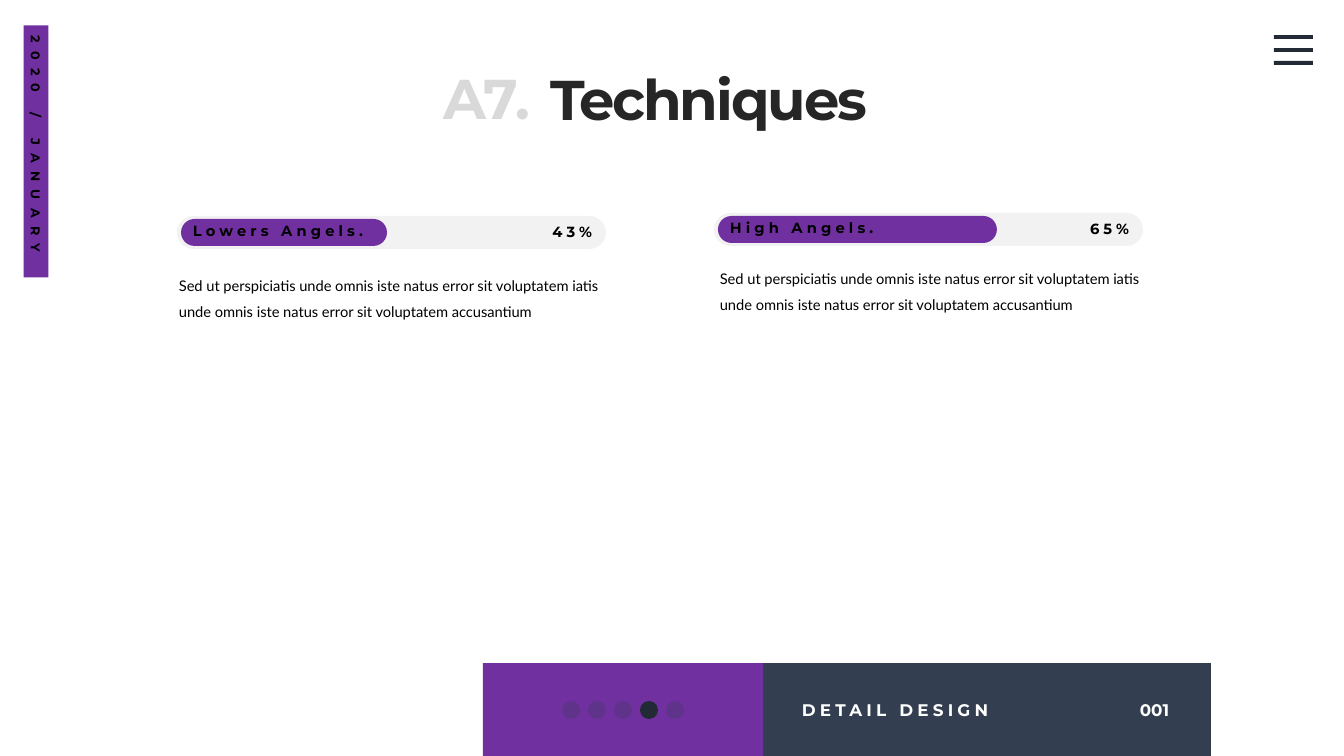
from lxml.etree import SubElement
from pptx import Presentation
from pptx.dml.color import RGBColor
from pptx.enum.shapes import MSO_SHAPE
from pptx.enum.text import MSO_ANCHOR, MSO_AUTO_SIZE, PP_ALIGN
from pptx.oxml.ns import qn
from pptx.util import Emu, Pt

SCALE = 914400 / 100.8
INK = {
    "purple": "7030A0", "slate": "333F50", "navy": "222A35",
    "track": "F2F2F2", "pale": "D9D9D9", "coal": "262626",
    "black": "000000", "white": "FFFFFF",
}
LOREM = ("Sed ut perspiciatis unde omnis iste natus error sit voluptatem iatis "
         "unde omnis iste natus error sit voluptatem accusantium")


def px(*sizes):
    """Turn px lengths into EMU."""
    return [Emu(round(size * SCALE)) for size in sizes]


class Page:
    """Hold the style and the current slide."""

    def __init__(self, deck):
        """Add a title-only slide."""
        self.slide = deck.slides.add_slide(deck.slide_layouts[5])
        self.shapes = self.slide.shapes
        self.font = "Montserrat"

    def group(self):
        """Add an empty group and return its shapes."""
        return self.shapes.add_group_shape().shapes

    def shape(self, box, ink, kind=MSO_SHAPE.RECTANGLE, host=None, alpha=None):
        """Add a filled shape without a line."""
        item = (host or self.shapes).add_shape(kind, *px(*box))
        item.shadow.inherit = False
        item.fill.solid()
        item.fill.fore_color.rgb = RGBColor.from_string(INK[ink])
        item.line.fill.background()
        if alpha:
            tint = item.element.spPr.find(".//" + qn("a:srgbClr"))
            SubElement(tint, qn("a:alpha"), val=str(alpha * 1000))
        return item

    def label(self, item, words, size, ink, track=0, align=PP_ALIGN.LEFT,
              wrap=True, grow=True, bold=True, font=None, lead=None,
              anchor=MSO_ANCHOR.TOP):
        """Put one styled run into a shape."""
        frame = item.text_frame
        frame.word_wrap = wrap
        frame.auto_size = (MSO_AUTO_SIZE.SHAPE_TO_FIT_TEXT if grow
                           else MSO_AUTO_SIZE.NONE)
        frame.vertical_anchor = anchor
        para = frame.paragraphs[0]
        para.alignment = align
        if lead:
            para.line_spacing = lead
        run = para.add_run()
        run.text = words
        run.font.name = font or self.font
        run.font.size = Pt(size)
        run.font.bold = bold
        run.font.color.rgb = RGBColor.from_string(INK[ink])
        if track:
            run._r.get_or_add_rPr().set("spc", str(round(track * 100)))

    def text(self, box, words, size, ink, **style):
        """Add a text box."""
        self.label(self.shapes.add_textbox(*px(*box)), words, size, ink, **style)

    def title(self, box, words, size, ink, **style):
        """Move and fill the title placeholder."""
        item = self.shapes.title
        item.left, item.top, item.width, item.height = px(*box)
        self.label(item, words, size, ink, **style)

    def meter(self, left, top, name, span, share):
        """Add a progress bar with its name and share."""
        pill = MSO_SHAPE.ROUNDED_RECTANGLE
        for box, ink in (((left, top, 429, 33), "track"),
                         ((left + 4, top + 3, span, 27), "purple")):
            self.shape(box, ink, pill).adjustments[0] = 0.5
        self.text((left + 6, top + 1, 231, 29), name, 10.5, "black", track=3)
        self.text((left + 356, top + 2, 69, 28), share, 10.5, "black",
                  track=3, align=PP_ALIGN.RIGHT)


def main():
    """Build the slide."""
    deck = Presentation()
    deck.slide_width, deck.slide_height = px(1344, 756)
    page = Page(deck)

    page.shape((763, 663, 448, 93), "slate")
    page.text((1130, 695, 50, 30), "001", 12, "white", wrap=False)
    page.text((792, 695, 213, 30), "DETAIL DESIGN", 12, "white",
              track=3, wrap=False)
    page.shape((483, 663, 280, 93), "purple")
    dots = page.group()
    for step in range(5):
        ink, alpha = ("navy", None) if step == 3 else ("slate", 25)
        page.shape((562 + 26 * step, 701, 18, 18), ink, MSO_SHAPE.OVAL,
                   dots, alpha)

    ribbon = page.shape((-90, 139, 252, 25), "purple")
    ribbon.rotation = 90
    page.label(ribbon, "2020 / JANUARY", 9, "black", track=6, wrap=False,
               anchor=MSO_ANCHOR.MIDDLE)
    menu = page.group()
    for step in range(3):
        page.shape((1274, 35 + 13 * step, 39, 4), "navy", host=menu)

    page.text((430, 59, 114, 78), "A7.", 40, "pale",
              align=PP_ALIGN.CENTER, wrap=False)
    page.title((504, 59, 409, 78), "Techniques", 40, "coal", track=-1.5,
               align=PP_ALIGN.CENTER)

    for left, top, name, span, share, note in (
            (177, 216, "Lowers Angels.", 206, "43%", (169, 263)),
            (714, 213, "High Angels.", 279, "65%", (710, 256))):
        page.meter(left, top, name, span, share)
        page.text((*note, 466, 78), LOREM, 10.5, "black", font="Lato",
                  bold=False, grow=False, lead=1.5)

    deck.save("out.pptx")


if __name__ == "__main__":
    main()
